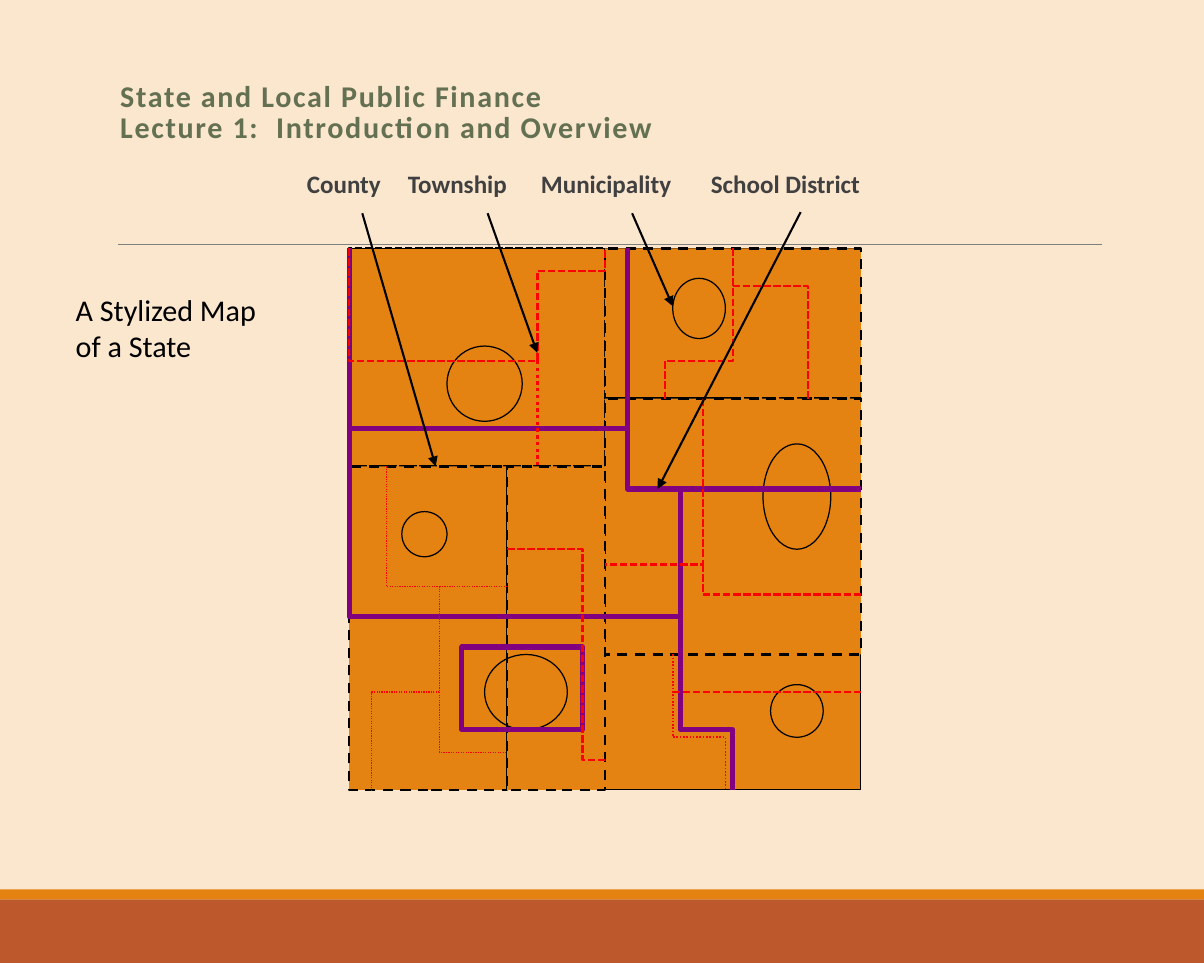
from lxml import etree
from pptx import Presentation
from pptx.dml.color import RGBColor
from pptx.enum.dml import MSO_LINE
from pptx.enum.shapes import MSO_CONNECTOR, MSO_SHAPE
from pptx.oxml.ns import qn
from pptx.util import Pt

RECTANGLE, ELLIPSE = MSO_SHAPE.RECTANGLE, MSO_SHAPE.OVAL
STRAIGHT = MSO_CONNECTOR.STRAIGHT
DASH, SHORT_DASH, DOT = MSO_LINE.DASH, MSO_LINE.SQUARE_DOT, MSO_LINE.ROUND_DOT

CREAM, ORANGE, RUST = "FBE6CE", "E48312", "BD582C"
BLACK, PURPLE, RED = "000000", "800080", "FF0000"
GRID_COLUMNS, GRID_ROWS = 68, 72

THIN = (BLACK, 0.75, None)
COUNTY_BORDER = (BLACK, 1.5, DASH)
DISTRICT_BORDER = (PURPLE, 3, None)
TOWNSHIP_BORDER = (RED, 1.5, SHORT_DASH)
TOWNSHIP_DOTS = (RED, 0.75, DOT)

COUNTIES = [
    ((0, 0, 34, 29), None, (BLACK, 1.5, SHORT_DASH)),
    ((34, 0, 34, 20), ORANGE, COUNTY_BORDER),
    ((34, 20, 34, 34), ORANGE, COUNTY_BORDER),
    ((0, 29, 21, 43), ORANGE, COUNTY_BORDER),
    ((21, 29, 13, 43), ORANGE, COUNTY_BORDER),
]
MUNICIPALITIES = [
    ((13, 13, 10, 10), ORANGE),
    ((55, 26, 9, 14), ORANGE),
    ((18, 54, 11, 10), None),
    ((43, 4, 7, 8), ORANGE),
    ((56, 58, 7, 7), ORANGE),
    ((7, 35, 6, 6), ORANGE),
]
SCHOOL_DISTRICTS = [
    [(0, 0), (0, 24), (37, 24), (37, 0)],
    [(37, 0), (37, 32), (68, 32)],
    [(0, 24), (0, 49), (44, 49), (44, 32)],
    [(44, 32), (44, 64), (51, 64), (51, 72)],
    [(15, 53), (15, 64), (31, 64), (31, 53), (15, 53)],
]
TOWNSHIPS = [
    ([(0, 0), (0, 15), (25, 15), (25, 3), (34, 3), (34, 0)], TOWNSHIP_BORDER),
    ([(25, 15), (25, 29)], (RED, 2, DOT)),
    ([(5, 29), (5, 45), (12, 45), (12, 59), (3, 59), (3, 72)], TOWNSHIP_DOTS),
    ([(12, 45), (21, 45)], TOWNSHIP_DOTS),
    ([(12, 59), (12, 67), (21, 67)], TOWNSHIP_DOTS),
    ([(21, 40), (31, 40), (31, 68), (34, 68)], TOWNSHIP_BORDER),
    ([(43, 54), (43, 65), (50, 65), (50, 72)], (RED, 1, DOT)),
    ([(43, 59), (68, 59)], TOWNSHIP_BORDER),
    ([(47, 20), (47, 42), (34, 42)], TOWNSHIP_BORDER),
    ([(47, 42), (47, 46), (68, 46)], TOWNSHIP_BORDER),
    ([(51, 0), (51, 15), (42, 15), (42, 20)], TOWNSHIP_BORDER),
    ([(51, 5), (61, 5), (61, 20)], TOWNSHIP_BORDER),
]
LABEL_ARROWS = [
    [(1.75, -4.65), (11.5, 29)],
    [(18.4, -4.65), (25, 13.9)],
    [(37.6, -4.65), (43, 7.7)],
    [(60, -4.8), (41, 32)],
]


def color(hex_value):
    """Turn a hex string into a colour."""
    return RGBColor.from_string(hex_value)


def style_line(line, style):
    """Apply a colour, width and dash to a line."""
    hex_value, width, dash = style
    line.color.rgb = color(hex_value)
    line.width = Pt(width)
    if dash is not None:
        line.dash_style = dash


def add_area(slide, preset, box, fill=None, outline=None):
    """Draw a preset shape in a box of points."""
    area = slide.shapes.add_shape(preset, *map(Pt, box))
    area.shadow.inherit = False
    if fill:
        area.fill.solid()
        area.fill.fore_color.rgb = color(fill)
    else:
        area.fill.background()
    if outline:
        style_line(area.line, outline)
    else:
        area.line.fill.background()


def add_line(slide, start, end, style, arrow=False):
    """Draw a straight line, with an arrowhead at its end if asked."""
    line = slide.shapes.add_connector(STRAIGHT, *map(Pt, (*start, *end)))
    style_line(line.line, style)
    properties = line._element.spPr
    if arrow:
        etree.SubElement(properties.find(qn("a:ln")), qn("a:tailEnd"), type="triangle")
    etree.SubElement(properties, qn("a:effectLst"))


def add_border(slide, points, style):
    """Draw a border through a list of points."""
    if len(points) == 2:
        add_line(slide, *points, style)
        return
    corners = [(Pt(x), Pt(y)) for x, y in points]
    builder = slide.shapes.build_freeform(*corners[0], scale=1.0)
    builder.add_line_segments(corners[1:], close=points[0] == points[-1])
    border = builder.convert_to_shape()
    border.shadow.inherit = False
    border.fill.background()
    style_line(border.line, style)


def add_text(slide, box, text, hex_value, font, spacing=1.0):
    """Write one paragraph in a box and return the paragraph."""
    frame = slide.shapes.add_textbox(*map(Pt, box)).text_frame
    frame.word_wrap = True
    paragraph = frame.paragraphs[0]
    paragraph.text = text
    paragraph.line_spacing = spacing
    for run in paragraph.runs:
        run.font.color.rgb = color(hex_value)
        for key, value in {"name": "Calibri", **font}.items():
            setattr(run.font, key, value)
    return paragraph


def draw_frame(slide, box):
    """Draw the background, footer bands and header rule."""
    left, top, width, height = box
    slide.background.fill.solid()
    slide.background.fill.fore_color.rgb = color(CREAM)
    add_area(slide, RECTANGLE, (left, top + height - 38, width, 38), RUST)
    add_area(slide, RECTANGLE, (left, top + height - 44, width, 6), ORANGE)
    rule = top + 146.2
    add_line(slide, (left + 70.6, rule), (left + 658.8, rule), ("808080", 0.5, None))


def draw_title(slide, box):
    """Write the course and lecture title."""
    title = add_text(
        slide, box,
        "State and Local Public Finance\nLecture 1:  Introduction and Overview",
        "637052", {"size": Pt(18), "bold": True}, 0.85)
    for run in title.runs:
        run.font._element.set("spc", "100")


def draw_labels(slide, box):
    """Write the four government names at tab stops."""
    labels = add_text(
        slide, box, "County\tTownship\tMunicipality\tSchool District",
        "404040", {"size": Pt(15), "bold": True}, 0.9)
    stops = etree.SubElement(labels._p.get_or_add_pPr(), qn("a:tabLst"))
    for position in (60.5, 140, 241.6):
        etree.SubElement(stops, qn("a:tab"), pos=str(Pt(position)), algn="l")


def draw_map(slide, box):
    """Draw the state map and its label arrows on a grid inside the box."""
    left, top, width, height = box
    column, row = width / GRID_COLUMNS, height / GRID_ROWS

    def place(points):
        """Turn grid points into slide points."""
        return [(left + x * column, top + y * row) for x, y in points]

    def cell(x, y, columns, rows):
        """Turn a grid box into a slide box."""
        return (*place([(x, y)])[0], columns * column, rows * row)

    add_area(slide, RECTANGLE, box, ORANGE, THIN)
    for county, fill, border in COUNTIES:
        add_area(slide, RECTANGLE, cell(*county), fill, border)
    for municipality, fill in MUNICIPALITIES:
        add_area(slide, ELLIPSE, cell(*municipality), fill, THIN)
    for district in SCHOOL_DISTRICTS:
        add_border(slide, place(district), DISTRICT_BORDER)
    for township, border in TOWNSHIPS:
        add_border(slide, place(township), border)
    for arrow in LABEL_ARROWS:
        add_line(slide, *place(arrow), (BLACK, 1.25, None), arrow=True)


def main():
    """Build the slide and save it."""
    deck = Presentation()
    deck.slide_width, deck.slide_height = Pt(720), Pt(576)
    slide = deck.slides.add_slide(deck.slide_layouts[6])
    draw_frame(slide, (0, 0, 720, 576))
    draw_title(slide, (64.8, 46, 594, 54))
    draw_labels(slide, (176.4, 99.4, 453, 26))
    add_text(slide, (38.2, 170.6, 135, 51), "A Stylized Map of a State",
             BLACK, {"size": Pt(18)})
    draw_map(slide, (208.8, 148.5, 306, 324))
    deck.save("out.pptx")


if __name__ == "__main__":
    main()
